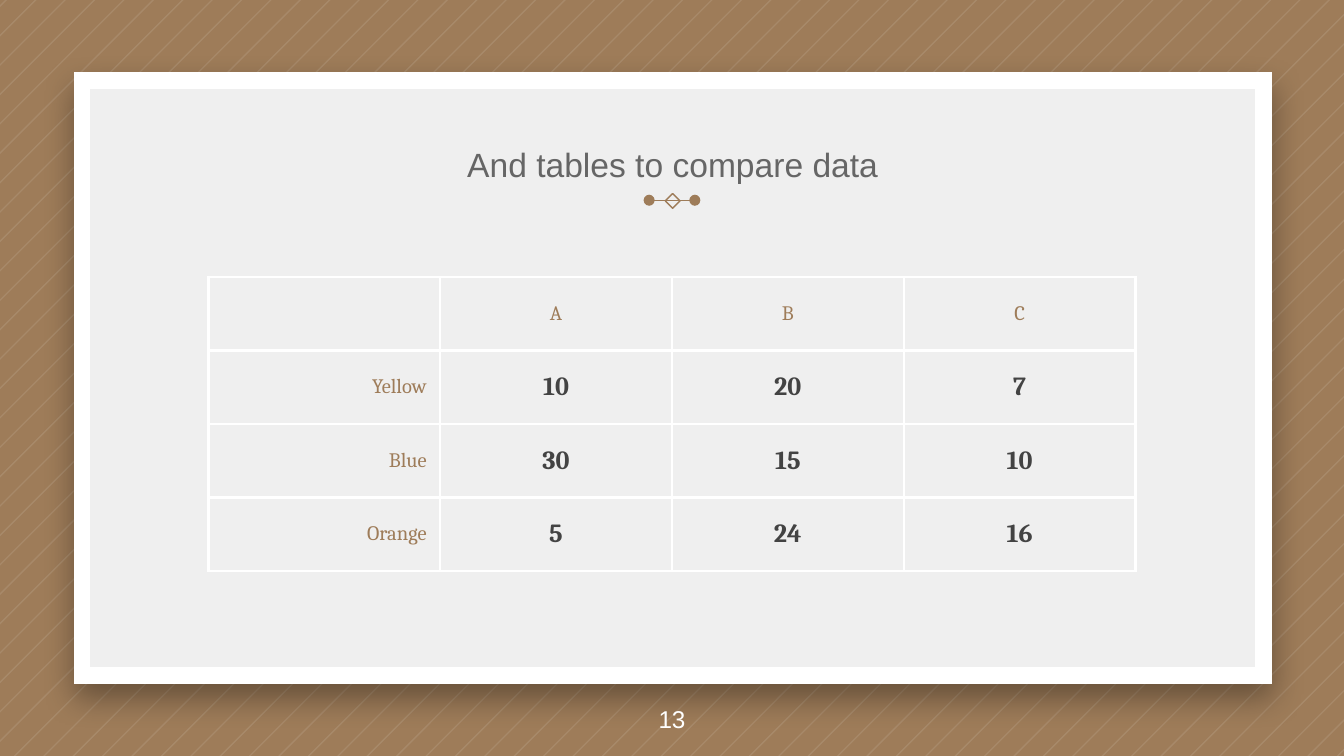
import pptx
import pptx.dml.color
import pptx.enum.shapes
import pptx.enum.text
import pptx.oxml
import pptx.oxml.ns
import pptx.util
from dataclasses import dataclass

Inches, Pt = pptx.util.Inches, pptx.util.Pt
RGB = pptx.dml.color.RGBColor.from_string
Shape = pptx.enum.shapes.MSO_SHAPE
Align, Anchor = pptx.enum.text.PP_ALIGN, pptx.enum.text.MSO_ANCHOR
qn = pptx.oxml.ns.qn


@dataclass(frozen=True)
class Theme:
    brown: str = "9E7C59"
    white: str = "FFFFFF"
    panel: str = "EFEFEF"
    title_gray: str = "666666"
    value_gray: str = "434343"
    sans: str = "Arial"
    serif: str = "Cambria"
    title_size: int = 18
    value_size: int = 14
    number_size: int = 13
    label_size: int = 11


theme = Theme()
WIDTH = 10
HEIGHT = WIDTH * 9 / 16


def add_drawing_xml(parent, xml):
    """Append the elements in xml, written with the a: prefix, to parent."""
    namespace = pptx.oxml.ns.nsdecls("a")
    for child in list(pptx.oxml.parse_xml(f"<a:wrap {namespace}>{xml}</a:wrap>")):
        parent.append(child)


def style_text(paragraph, font_name, size, color, align=Align.CENTER, bold=False):
    paragraph.alignment = align
    for font in [paragraph.font] + [run.font for run in paragraph.runs]:
        font.name, font.size, font.bold = font_name, Pt(size), bold
        font.color.rgb = RGB(color)


deck = pptx.Presentation()
deck.slide_width, deck.slide_height = Inches(WIDTH), Inches(HEIGHT)
slide = deck.slides.add_slide(deck.slide_layouts[5])
shapes = slide.shapes
slide.background.fill.solid()
slide.background.fill.fore_color.rgb = RGB(theme.brown)

# Diagonal stripes: each edge is the line x + y = reach, cut off at the slide
stripe_count, first_reach, pitch, thickness = 72, 0.04, 7 / 32, 0.014
stripes = None
for index in range(stripe_count):
    near = first_reach + index * pitch
    edges = []
    for reach in (near, near + thickness):
        edges.append([(min(reach, WIDTH), max(reach - WIDTH, 0)),
                      (max(reach - HEIGHT, 0), min(reach, HEIGHT))])
    outline = edges[0] + edges[1][::-1]
    corners = [(Inches(x), Inches(y)) for x, y in outline]
    if stripes is None:
        stripes = shapes.build_freeform(*corners[0])
    else:
        stripes.move_to(*corners[0])
    stripes.add_line_segments(corners[1:], close=True)
pattern = stripes.convert_to_shape()
pattern.shadow.inherit = False
pattern.line.fill.background()
pattern.fill.solid()
pattern.fill.fore_color.rgb = RGB(theme.white)
pattern_color = pattern._element.spPr.find(qn("a:solidFill"))[0]
add_drawing_xml(pattern_color, '<a:alpha val="10000"/>')

# Framed panel with a soft shadow below
panel = shapes.add_shape(Shape.RECTANGLE, Inches(0.61), Inches(0.6),
                         Inches(8.79), Inches(4.43))
panel.shadow.inherit = False
panel.fill.solid()
panel.fill.fore_color.rgb = RGB(theme.panel)
panel.line.color.rgb = RGB(theme.white)
panel.line.width = Pt(9)
add_drawing_xml(panel._element.spPr.find(qn("a:ln")), '<a:miter lim="800000"/>')
add_drawing_xml(panel._element.spPr.find(qn("a:effectLst")),
                f'<a:outerShdw blurRad="{Pt(16.9)}" dist="{Pt(7.5)}" dir="5400000" '
                'algn="t" rotWithShape="0"><a:srgbClr val="000000">'
                '<a:alpha val="35000"/></a:srgbClr></a:outerShdw>')

# Ornament under the title
ornament = shapes.add_group_shape().shapes
rule = ornament.add_connector(pptx.enum.shapes.MSO_CONNECTOR.STRAIGHT,
                              Inches(4.83), Inches(1.49), Inches(5.17), Inches(1.49))
diamond = ornament.add_shape(Shape.DIAMOND, Inches(4.95), Inches(1.44),
                             Inches(0.11), Inches(0.11))
diamond.shadow.inherit = False
diamond.fill.background()
for part in (rule, diamond):
    part.line.color.rgb = RGB(theme.brown)
    part.line.width = Pt(0.75)
add_drawing_xml(rule._element.spPr.find(qn("a:ln")),
                '<a:headEnd type="oval"/><a:tailEnd type="oval"/>')
add_drawing_xml(rule._element.spPr, "<a:effectLst/>")

# Title and slide number
title = shapes.title
shapes._spTree.append(title._element)
title.left, title.top = Inches(0.99), Inches(0.81)
title.width, title.height = Inches(8.03), Inches(0.66)
title.text_frame.text = "And tables to compare data"

# Comparison table
rows = [
    ["", "A", "B", "C"],
    ["Yellow", "10", "20", "7"],
    ["Blue", "30", "15", "10"],
    ["Orange", "5", "24", "16"],
]
table = shapes.add_table(len(rows), len(rows[0]), Inches(1.55), Inches(2.06),
                         Inches(6.9), Inches(2.19)).table
table.horz_banding = False
for row_index, row in enumerate(rows):
    for column_index, text in enumerate(row):
        cell = table.cell(row_index, column_index)
        cell.text_frame.text = text
        cell.vertical_anchor = Anchor.MIDDLE
        cell.margin_left = cell.margin_right = Inches(0.1)
        cell.margin_top = cell.margin_bottom = Inches(0.07)
        paragraph = cell.text_frame.paragraphs[0]
        if row_index and column_index:
            style_text(paragraph, theme.serif, theme.value_size, theme.value_gray, bold=True)
        else:
            style_text(paragraph, theme.serif, theme.label_size, theme.brown,
                       Align.CENTER if column_index else Align.RIGHT)
        for side in ("lnL", "lnR", "lnT", "lnB"):
            add_drawing_xml(cell._tc.get_or_add_tcPr(),
                            f'<a:{side} w="{Pt(1.5)}"><a:solidFill>'
                            f'<a:srgbClr val="{theme.white}"/></a:solidFill></a:{side}>')
        cell.fill.background()

number = shapes.add_textbox(0, Inches(5.08), Inches(WIDTH), Inches(0.54))
number.text_frame.text = "13"
for box, anchor, size, color in (
    (title, Anchor.BOTTOM, theme.title_size, theme.title_gray),
    (number, Anchor.MIDDLE, theme.number_size, theme.white),
):
    frame = box.text_frame
    frame.word_wrap = True
    frame.auto_size = pptx.enum.text.MSO_AUTO_SIZE.NONE
    frame.vertical_anchor = anchor
    frame.margin_left = frame.margin_right = Inches(0.1)
    frame.margin_top = frame.margin_bottom = Inches(0.1)
    style_text(frame.paragraphs[0], theme.sans, size, color)

deck.save("out.pptx")
